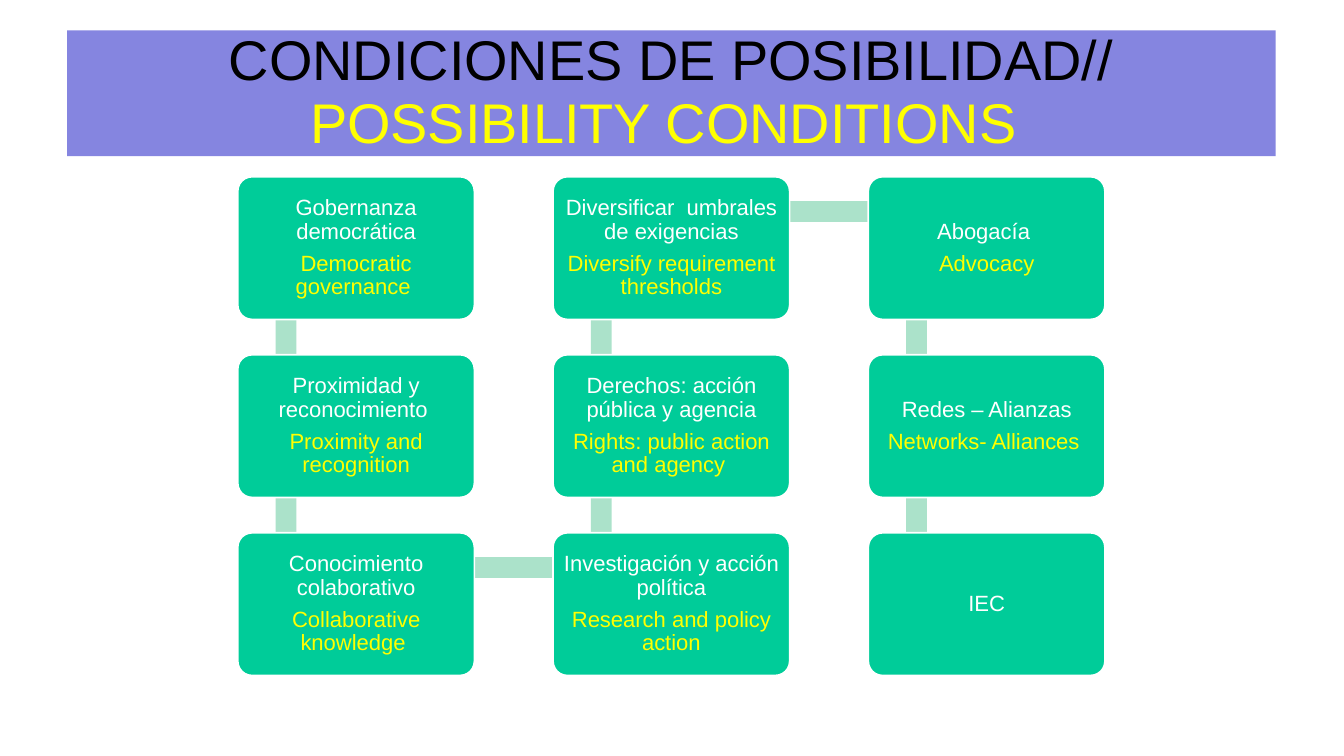
"""Build the bilingual slide on possibility conditions as a snaking chain of cards."""
import dataclasses
import itertools
import typing

import pptx
import pptx.dml.color
import pptx.enum.shapes
import pptx.enum.text
import pptx.util

Inches = pptx.util.Inches
Pt = pptx.util.Pt
SHAPE = pptx.enum.shapes.MSO_SHAPE
CENTER = pptx.enum.text.PP_ALIGN.CENTER

COLORS = {
    "banner": "8585E0",
    "card": "00CC99",
    "bar": "ABE2CA",
    "edge": "FFFFFF",
    "title": "000000",
    "spanish": "FFFFFF",
    "english": "FFFF00",
}
LEFT, TOP = 1.95, 1.45
COL_STEP, ROW_STEP = 2.585, 1.46
CARD_W, CARD_H = 1.94, 1.17
BAR = 0.17


@dataclasses.dataclass
class Card:
    col: int
    row: int
    spanish: str
    english: str = ""

    @property
    def x(self) -> float:
        return LEFT + self.col * COL_STEP

    @property
    def y(self) -> float:
        return TOP + self.row * ROW_STEP


CARDS = [
    Card(0, 0, "Gobernanza democrática", "Democratic governance "),
    Card(0, 1, "Proximidad y reconocimiento ", "Proximity and recognition"),
    Card(0, 2, "Conocimiento colaborativo", "Collaborative knowledge "),
    Card(1, 2, "Investigación y acción política", "Research and policy action"),
    Card(1, 1, "Derechos: acción pública y agencia", "Rights: public action and agency "),
    Card(1, 0, "Diversificar  umbrales de exigencias", "Diversify requirement thresholds"),
    Card(2, 0, "Abogacía ", "Advocacy"),
    Card(2, 1, "Redes – Alianzas", "Networks- Alliances "),
    Card(2, 2, "IEC"),
]


def rgb(name: str) -> pptx.dml.color.RGBColor:
    return pptx.dml.color.RGBColor.from_string(COLORS[name])


def apply(target: typing.Any, values: dict[str, typing.Any]) -> None:
    for name, value in values.items():
        setattr(target, name, value)


def fill(sp: typing.Any, color: str) -> None:
    sp.fill.solid()
    sp.fill.fore_color.rgb = rgb(color)


def set_frame(tf: typing.Any, inset: float) -> None:
    margins = dict.fromkeys(
        ("margin_left", "margin_top", "margin_right", "margin_bottom"), Inches(inset))
    apply(tf, margins | {
        "word_wrap": True,
        "auto_size": pptx.enum.text.MSO_AUTO_SIZE.NONE,
        "vertical_anchor": pptx.enum.text.MSO_ANCHOR.MIDDLE,
    })


def add_run(p: typing.Any, text: str, size: float, color: str) -> None:
    r = p.add_run()
    r.text = text
    apply(r.font, {"name": "Arial", "size": Pt(size)})
    r.font.color.rgb = rgb(color)


def add_title(s: typing.Any) -> None:
    sp = s.shapes.title
    apply(sp, {"left": Inches(0.55), "top": Inches(0.25),
               "width": Inches(9.91), "height": Inches(1.03)})
    fill(sp, "banner")
    set_frame(sp.text_frame, 0)
    p = sp.text_frame.paragraphs[0]
    apply(p, {"alignment": CENTER, "line_spacing": 0.93})
    add_run(p, "CONDICIONES DE POSIBILIDAD// ", 33, "title")
    add_run(p, "POSSIBILITY CONDITIONS ", 33, "english")


def add_box(s: typing.Any, kind: typing.Any, x: float, y: float,
            w: float, h: float, color: str) -> typing.Any:
    sp = s.shapes.add_shape(kind, Inches(x), Inches(y), Inches(w), Inches(h))
    sp.shadow.inherit = False
    fill(sp, color)
    sp.line.fill.background()
    return sp


def add_bar(s: typing.Any, a: Card, b: Card) -> None:
    x, y = min(a.x, b.x), min(a.y, b.y)
    if a.col == b.col:
        box = (x + 0.31, y + 0.29, BAR, ROW_STEP)
    else:
        box = (x + 0.4, y + 0.2, COL_STEP, BAR)
    add_box(s, SHAPE.RECTANGLE, *box, "bar")


def add_card(s: typing.Any, card: Card) -> None:
    sp = add_box(s, SHAPE.ROUNDED_RECTANGLE, card.x, card.y, CARD_W, CARD_H, "card")
    sp.adjustments[0] = 0.1
    sp.line.color.rgb = rgb("edge")
    sp.line.width = Pt(1)
    tf = sp.text_frame
    set_frame(tf, 0.05)
    p = tf.paragraphs[0]
    apply(p, {"alignment": CENTER, "line_spacing": 0.9})
    add_run(p, card.spanish, 13, "spanish")
    if card.english:
        p = tf.add_paragraph()
        apply(p, {"alignment": CENTER, "line_spacing": 0.9, "space_before": Pt(4.6)})
        add_run(p, card.english, 13, "english")


def main() -> None:
    prs = pptx.Presentation()
    apply(prs, {"slide_width": Inches(11.02), "slide_height": Inches(6.2)})
    s = prs.slides.add_slide(prs.slide_layouts.get_by_name("Title Only"))
    add_title(s)
    for a, b in itertools.pairwise(CARDS):
        add_bar(s, a, b)
    for card in CARDS:
        add_card(s, card)
    prs.save("out.pptx")


if __name__ == "__main__":
    main()
